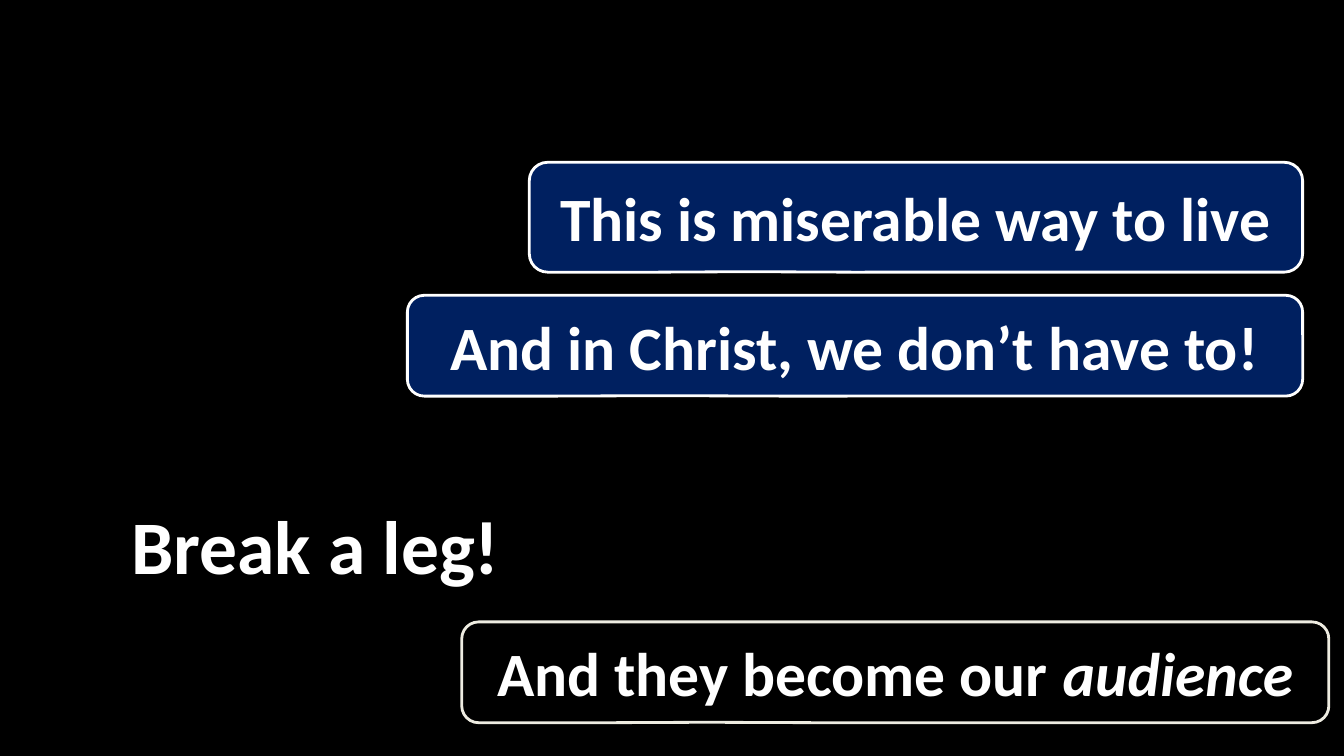
from dataclasses import dataclass
from typing import Optional

import pptx
import pptx.dml.color
import pptx.enum.shapes
import pptx.enum.text
import pptx.slide
import pptx.util

Inches = pptx.util.Inches

COLORS = {"black": "000000", "navy": "002060", "white": "FFFFFF", "cream": "EEECE1"}
FONT = {"name": "Calibri", "bold": True}
POINTER = (-0.219, 0.496, 0.167)  # tip x, tip y, corner radius


@dataclass
class Callout:
    left: float
    top: float
    width: float
    text: str
    fill: str
    line: Optional[str] = None
    height: float = 1
    size: int = 44
    italic_text: str = ""


CALLOUTS = [
    Callout(4.58, 6.17, 8.6, "And they become our ", "black", "cream",
            italic_text="audience"),
    Callout(0.42, 4.9, 5.42, "Break a leg!", "black", size=54),
    Callout(5.25, 1.61, 7.67, "This is miserable way to live", "navy", "white",
            height=1.09),
    Callout(4.04, 2.93, 8.88, "And in Christ, we don’t have to!", "navy", "white"),
]


def rgb(name: str) -> pptx.dml.color.RGBColor:
    return pptx.dml.color.RGBColor.from_string(COLORS[name])


def draw_callout(slide: pptx.slide.Slide, c: Callout) -> None:
    sp = slide.shapes.add_shape(
        pptx.enum.shapes.MSO_SHAPE.ROUNDED_RECTANGULAR_CALLOUT,
        Inches(c.left), Inches(c.top), Inches(c.width), Inches(c.height))
    for i, value in enumerate(POINTER):
        sp.adjustments[i] = value
    sp.shadow.inherit = False
    sp.fill.solid()
    sp.fill.fore_color.rgb = rgb(c.fill)
    if c.line:
        sp.line.color.rgb = rgb(c.line)
        sp.line.width = pptx.util.Pt(2)
    else:
        sp.line.fill.background()

    # Centred label, with an optional italic ending
    tf = sp.text_frame
    tf.word_wrap = True
    tf.vertical_anchor = pptx.enum.text.MSO_ANCHOR.MIDDLE
    p = tf.paragraphs[0]
    p.alignment = pptx.enum.text.PP_ALIGN.CENTER
    for text, extra in ((c.text, {}), (c.italic_text, {"italic": True})):
        if not text:
            continue
        r = p.add_run()
        r.text = text
        for key, value in {**FONT, "size": pptx.util.Pt(c.size), **extra}.items():
            setattr(r.font, key, value)
        r.font.color.rgb = rgb("white")


def main() -> None:
    prs = pptx.Presentation()
    prs.slide_width, prs.slide_height = Inches(13.33), Inches(7.5)
    slide = prs.slides.add_slide(prs.slide_layouts[6])

    # Black background
    slide.background.fill.solid()
    slide.background.fill.fore_color.rgb = rgb("black")

    # Callouts, back to front
    for callout in CALLOUTS:
        draw_callout(slide, callout)
    prs.save("out.pptx")


if __name__ == "__main__":
    main()
